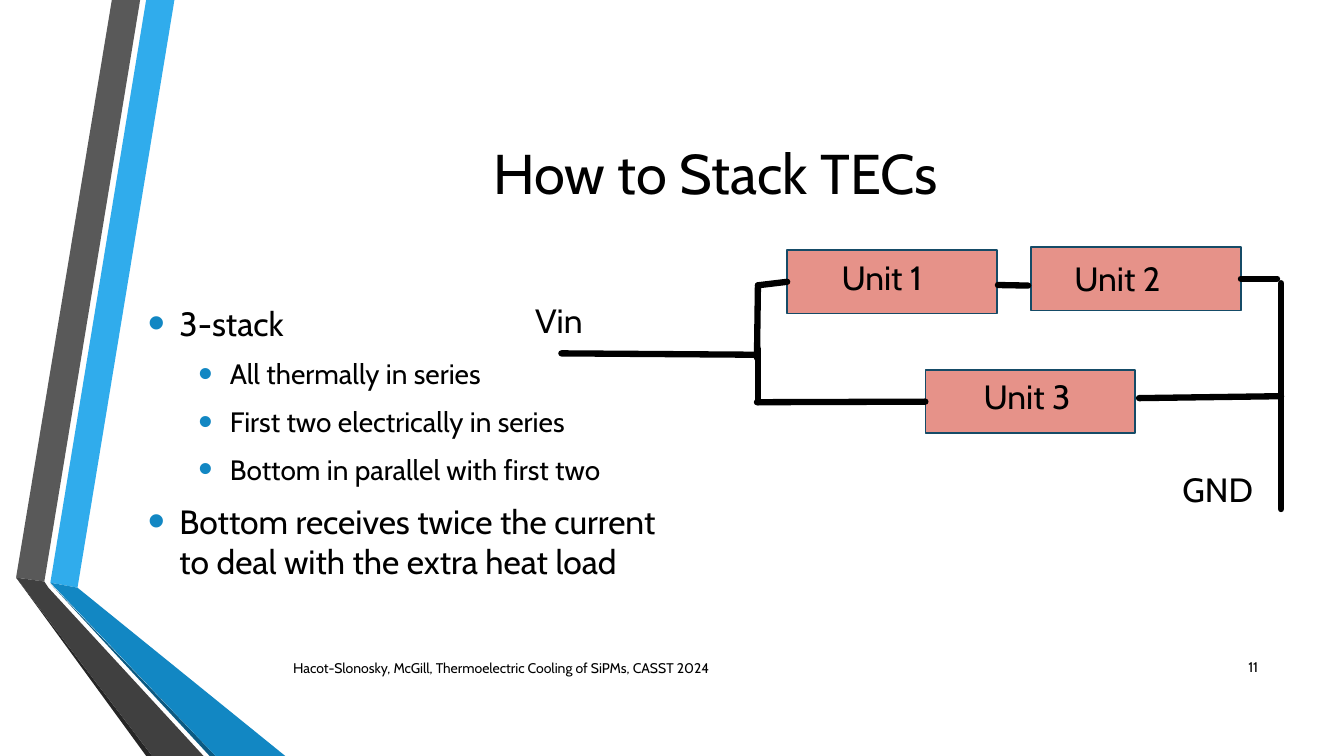
from dataclasses import dataclass

from lxml.etree import SubElement
from pptx import Presentation
from pptx.dml.color import RGBColor
from pptx.enum.shapes import MSO_CONNECTOR, MSO_SHAPE
from pptx.enum.text import MSO_ANCHOR, PP_ALIGN
from pptx.oxml.ns import qn
from pptx.util import Pt

LEFT_SIDE, RIGHT_SIDE = 1, 3


@dataclass(frozen=True)
class Theme:
    font: str = "Cabin"
    text: str = "000000"
    bullet: str = "1287C3"
    unit_fill: str = "E69289"
    unit_line: str = "154B67"
    wire: str = "000000"
    title_size: float = 40
    main_size: float = 24
    sub_size: float = 20
    footer_size: float = 10
    wire_width: float = 4.5


@dataclass(frozen=True)
class Ribbon:
    color: str
    points: tuple


@dataclass(frozen=True)
class Unit:
    name: str
    left: float
    top: float
    label_left: float
    label_top: float


@dataclass(frozen=True)
class Wire:
    """A straight lead; start_unit or end_unit is the unit whose side it joins."""
    x1: float
    y1: float
    x2: float
    y2: float
    start_unit: str = ""
    end_unit: str = ""


@dataclass(frozen=True)
class Label:
    text: str
    left: float
    top: float
    width: float = 154.8
    height: float = 36
    size: float = 24
    align: PP_ALIGN = PP_ALIGN.LEFT
    anchor: MSO_ANCHOR = MSO_ANCHOR.TOP


THEME = Theme()
UNIT_W, UNIT_H = 149.8, 45.4

RIBBONS = (
    Ribbon("30ACEC", ((36, 416.2), (55.4, 419.8), (124.6, 0), (104.4, 0))),
    Ribbon("595959", ((100.1, 0), (79.9, 0), (11.5, 412.6), (31.7, 415.4))),
    Ribbon("262626", ((11.5, 412.6), (104.4, 540), (108.7, 540))),
    Ribbon("0C5A82", ((36, 416.9), (149.8, 540), (154.1, 540))),
    Ribbon("1287C3", ((36, 416.2), (154.1, 540), (203.8, 540), (55.4, 419.8))),
    Ribbon("404040", ((145.4, 540), (34.6, 419.8), (31.7, 415.4),
                      (11.5, 412.6), (108.7, 540))),
)
UNITS = (
    Unit("Unit 1", 562.3, 178.6, 594, 180),
    Unit("Unit 2", 736.6, 176.4, 760.3, 180.7),
    Unit("Unit 3", 661, 264.2, 695.5, 265),
)
WIRES = (
    Wire(401, 252.4, 540, 253.4),
    Wire(540.7, 255.6, 541.4, 203.8),
    Wire(541.4, 287.3, 541.4, 249.1),
    Wire(540.7, 287.3, 661, 286.9, end_unit="Unit 3"),
    Wire(541.4, 203.8, 562.3, 201.3, end_unit="Unit 1"),
    Wire(712.8, 203.6, 734.4, 204),
    Wire(813.6, 284.4, 915.1, 283),
    Wire(915.1, 363.6, 915.1, 202.3),
    Wire(886.4, 199.1, 912.2, 199.1, start_unit="Unit 2"),
)
LABELS = (
    Label("Vin", 375.1, 211),
    Label("GND", 837.4, 331.2),
    Label("11", 862.6, 462.2, 43.2, 28.8, THEME.footer_size,
          PP_ALIGN.RIGHT, MSO_ANCHOR.MIDDLE),
    Label("Hacot-Slonosky, McGill, Thermoelectric Cooling of SiPMs, CASST 2024",
          202.3, 463, 558, 28.8, THEME.footer_size, anchor=MSO_ANCHOR.MIDDLE),
)
BULLETS = (
    (0, "3-stack"),
    (1, "All thermally in series"),
    (1, "First two electrically in series"),
    (1, "Bottom in parallel with first two"),
    (0, "Bottom receives twice the current to deal with the extra heat load"),
)


def rgb(color: str) -> RGBColor:
    return RGBColor.from_string(color)


def format_runs(p, size: float) -> None:
    for r in p.runs:
        r.font.name = THEME.font
        r.font.size = Pt(size)
        r.font.color.rgb = rgb(THEME.text)


def add_ribbon(s, ribbon: Ribbon) -> None:
    points = [(Pt(x), Pt(y)) for x, y in ribbon.points]
    builder = s.shapes.build_freeform(*points[0], scale=1.0)
    builder.add_line_segments(points[1:], close=True)
    sp = builder.convert_to_shape()
    sp.shadow.inherit = False
    sp.fill.solid()
    sp.fill.fore_color.rgb = rgb(ribbon.color)
    sp.line.fill.background()


def add_label(s, label: Label) -> None:
    sp = s.shapes.add_textbox(Pt(label.left), Pt(label.top),
                              Pt(label.width), Pt(label.height))
    tf = sp.text_frame
    tf.word_wrap = True
    tf.vertical_anchor = label.anchor
    tf.text = label.text
    p = tf.paragraphs[0]
    p.alignment = label.align
    format_runs(p, label.size)


def add_unit(s, unit: Unit):
    sp = s.shapes.add_shape(MSO_SHAPE.RECTANGLE, Pt(unit.left), Pt(unit.top),
                            Pt(UNIT_W), Pt(UNIT_H))
    sp.shadow.inherit = False
    sp.fill.solid()
    sp.fill.fore_color.rgb = rgb(THEME.unit_fill)
    sp.line.color.rgb = rgb(THEME.unit_line)
    sp.line.width = Pt(1.25)
    return sp


def add_wire(s, wire: Wire, boxes: dict) -> None:
    line = s.shapes.add_connector(MSO_CONNECTOR.STRAIGHT, Pt(wire.x1), Pt(wire.y1),
                                  Pt(wire.x2), Pt(wire.y2))
    if wire.start_unit:
        line.begin_connect(boxes[wire.start_unit], RIGHT_SIDE)
    if wire.end_unit:
        line.end_connect(boxes[wire.end_unit], LEFT_SIDE)
    line.line.color.rgb = rgb(THEME.wire)
    line.line.width = Pt(THEME.wire_width)
    ln = line.line._get_or_add_ln()
    ln.set("cap", "rnd")
    SubElement(ln, qn("a:round"))
    SubElement(line._element.spPr, qn("a:effectLst"))


def add_bullets(s) -> None:
    sp = s.shapes.add_textbox(Pt(98.6), Pt(212.5), Pt(393.8), Pt(246.2))
    tf = sp.text_frame
    tf.word_wrap = True
    for i, (level, text) in enumerate(BULLETS):
        p = tf.add_paragraph() if i else tf.paragraphs[0]
        size = THEME.sub_size if level else THEME.main_size
        p.text = text
        p.level = level
        p.space_before = Pt(0.2 * size)
        p.space_after = Pt(6)
        format_runs(p, size)
        pPr = p._p.get_or_add_pPr()
        pPr.set("marL", str(Pt(22.5 + 36 * level)))
        pPr.set("indent", str(-Pt(22.5)))
        SubElement(SubElement(pPr, qn("a:buClr")), qn("a:srgbClr"), val=THEME.bullet)
        SubElement(pPr, qn("a:buSzPct"), val="145000")
        SubElement(pPr, qn("a:buFont"), typeface="Arial")
        SubElement(pPr, qn("a:buChar"), char="•")


def set_title(s, text: str) -> None:
    sp = s.shapes.title
    sp.left, sp.top, sp.width, sp.height = Pt(116.6), Pt(54), Pt(789.1), Pt(138.2)
    tf = sp.text_frame
    tf.text = text
    tf.vertical_anchor = MSO_ANCHOR.MIDDLE
    p = tf.paragraphs[0]
    p.alignment = PP_ALIGN.CENTER
    format_runs(p, THEME.title_size)


def main() -> None:
    prs = Presentation()
    prs.slide_width, prs.slide_height = Pt(960), Pt(540)
    s = prs.slides.add_slide(prs.slide_layouts[5])
    for ribbon in RIBBONS:
        add_ribbon(s, ribbon)
    set_title(s, "How to Stack TECs")
    add_bullets(s)
    boxes = {unit.name: add_unit(s, unit) for unit in UNITS}
    for unit in UNITS:
        add_label(s, Label(unit.name, unit.label_left, unit.label_top))
    for wire in WIRES:
        add_wire(s, wire, boxes)
    for label in LABELS:
        add_label(s, label)
    prs.save("out.pptx")


if __name__ == "__main__":
    main()
